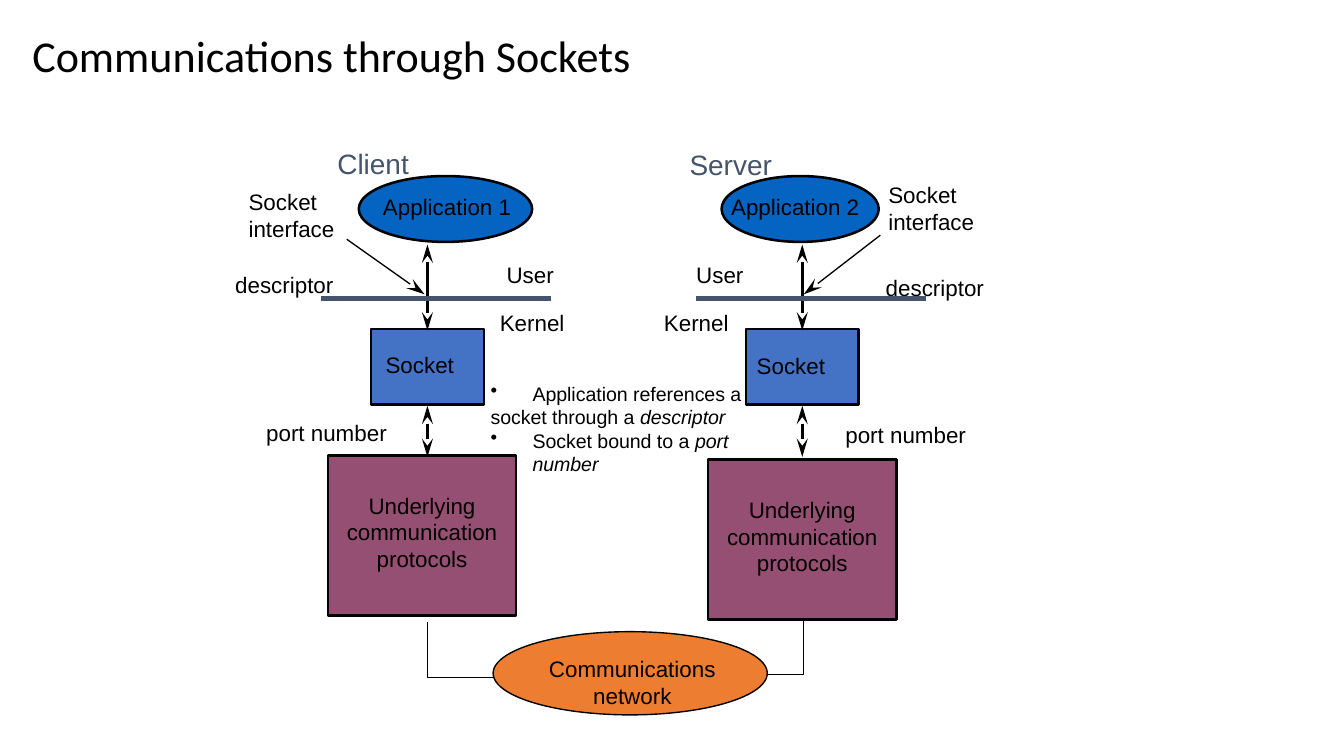
import pptx
import pptx.dml.color
import pptx.enum.shapes
import pptx.enum.text
import pptx.oxml.ns
import pptx.util
from lxml import etree

Pt = pptx.util.Pt
RGBColor = pptx.dml.color.RGBColor
Shape = pptx.enum.shapes.MSO_SHAPE
Align = pptx.enum.text.PP_ALIGN
Anchor = pptx.enum.text.MSO_ANCHOR
qn = pptx.oxml.ns.qn

BLACK = RGBColor(0x00, 0x00, 0x00)
SLATE = RGBColor(0x44, 0x54, 0x6A)
BLUE = RGBColor(0x05, 0x63, 0xC1)
SOCKET_BLUE = RGBColor(0x44, 0x72, 0xC4)
PLUM = RGBColor(0x95, 0x4F, 0x72)
ORANGE = RGBColor(0xED, 0x7D, 0x31)


class Diagram:
    """Style and page of a socket diagram, with lengths in points."""

    def __init__(self, page, font="Arial", size=12):
        self.page, self.font, self.size = page, font, size

    def shape(self, kind, left, top, width, height, fill, weight=1.35):
        box = self.page.shapes.add_shape(kind, Pt(left), Pt(top), Pt(width), Pt(height))
        box.shadow.inherit = False
        box.fill.solid()
        box.fill.fore_color.rgb = fill
        box.line.color.rgb = BLACK
        box.line.width = Pt(weight)

    def text(self, text, left, top, width, height=15, size=None, font=None,
             color=BLACK, align=Align.LEFT, anchor=Anchor.TOP):
        box = self.page.shapes.add_textbox(Pt(left), Pt(top), Pt(width), Pt(height))
        frame = box.text_frame
        frame.word_wrap = True
        frame.vertical_anchor = anchor
        frame.margin_left = frame.margin_right = frame.margin_top = frame.margin_bottom = 0
        para = frame.paragraphs[0]
        para.text = text
        para.alignment = align
        self.style(para, size, font, color)

    def style(self, para, size=None, font=None, color=BLACK):
        para.font.size = Pt(size or self.size)
        para.font.name = font or self.font
        para.font.color.rgb = color

    def notes(self, items, left, top, width, height, size, indent):
        box = self.page.shapes.add_textbox(Pt(left), Pt(top), Pt(width), Pt(height))
        frame = box.text_frame
        frame.word_wrap = True
        frame.margin_left = frame.margin_right = frame.margin_top = frame.margin_bottom = 0
        for index, (bulleted, plain, term) in enumerate(items):
            para = frame.add_paragraph() if index else frame.paragraphs[0]
            para.add_run().text = plain
            if term:
                span = para.add_run()
                span.text = term
                span.font.italic = True
            self.style(para, size)
            if bulleted:
                properties = para._p.get_or_add_pPr()
                properties.set("marL", str(Pt(indent)))
                properties.set("indent", str(-Pt(indent)))
                bullet = etree.Element(qn("a:buChar"), char="•")
                properties.insert_element_before(bullet, "a:tabLst", "a:defRPr")

    def line(self, start, end, color=BLACK, weight=0.7, heads=()):
        connector = self.page.shapes.add_connector(
            pptx.enum.shapes.MSO_CONNECTOR.STRAIGHT, *map(Pt, start + end))
        connector.line.color.rgb = color
        connector.line.width = Pt(weight)
        outline = connector.line._get_or_add_ln()
        for head in heads:
            etree.SubElement(outline, qn(f"a:{head}"), type="stealth", w="med", len="lg")
        etree.SubElement(connector._element.spPr, qn("a:effectLst"))

    def elbow(self, start, *points):
        builder = self.page.shapes.build_freeform(Pt(start[0]), Pt(start[1]), scale=1.0)
        builder.add_line_segments([(Pt(x), Pt(y)) for x, y in points], close=False)
        path = builder.convert_to_shape()
        path.shadow.inherit = False
        path.fill.background()
        path.line.color.rgb = BLACK
        path.line.width = Pt(0.7)


SIDES = [
    dict(axis=229, app=(192.2, 92.9), protocol=(175.7, 244), boundary=172.1,
         pointer=((185.8, 128.2), (227.5, 157.7)), role=("Client", 180.7, 78.5),
         labels=[("Application 1", 205.2, 103.7, 86), ("Socket", 206.6, 187.9, 50),
                 ("Socket interface", 133.2, 100.8, 54.7), ("descriptor", 126, 145.4, 60),
                 ("port number", 142.6, 224.6, 72), ("User", 271.4, 139.7, 34),
                 ("Kernel", 267.8, 165.6, 41)]),
    dict(axis=429.8, app=(386.6, 84.2), protocol=(379.4, 246.2), boundary=373,
         pointer=((471.6, 126), (430.6, 157.7)), role=("Server", 369.4, 79.2),
         labels=[("Application 2", 391.7, 103.7, 78.5), ("Socket", 405.4, 188.6, 50),
                 ("Socket interface", 475.9, 97.2, 53.3), ("descriptor", 474.5, 146.9, 60),
                 ("port number", 452.9, 225.4, 72), ("User", 373, 139.7, 36),
                 ("Kernel", 355.7, 165.6, 42.5)]),
]

NOTES = [
    (True, "Application references a", ""),
    (False, "socket through a ", "descriptor"),
    (True, "Socket bound to a ", "port number"),
]


def draw_side(diagram, axis, app, protocol, boundary, pointer, role, labels):
    name, left, top = role
    diagram.text(name, left, top, 60, 18, size=15, color=SLATE)
    diagram.shape(Shape.OVAL, app[0], 94.3, app[1], 35.3, BLUE)
    diagram.shape(Shape.RECTANGLE, axis - 30.2, 176.4, 60.5, 40.3, SOCKET_BLUE)
    diagram.shape(Shape.RECTANGLE, *protocol, 100.8, 85.7, PLUM)
    diagram.text("Underlying communication protocols", protocol[0] + 6, protocol[1] + 15.5,
                 88.8, 51, align=Align.CENTER, anchor=Anchor.MIDDLE)
    for top, bottom in ((131, 177.1), (217.4, 244.8)):
        diagram.line((axis, top), (axis, bottom), weight=1.35, heads=("headEnd", "tailEnd"))
    for label in labels:
        diagram.text(*label)
    diagram.line((boundary, 159.8), (boundary + 123.1, 159.8), SLATE, 2.7)
    diagram.line(*pointer, heads=("tailEnd",))


def main():
    deck = pptx.Presentation()
    deck.slide_width, deck.slide_height = Pt(720), Pt(405)
    diagram = Diagram(deck.slides.add_slide(deck.slide_layouts[6]))
    diagram.text("Communications through Sockets", 17.3, 11.5, 373, 35.3, size=23.6,
                 font="Calibri", anchor=Anchor.MIDDLE)
    diagram.elbow((430.6, 332.6), (430.6, 361.4), (383, 361.4))
    diagram.elbow((229, 333.4), (229, 362.9), (287.3, 362.9))
    diagram.shape(Shape.OVAL, 264.2, 338.4, 146.9, 44.6, ORANGE, 0.75)
    diagram.text("Communications network", 287.3, 347, 103, 36.7,
                 align=Align.CENTER, anchor=Anchor.MIDDLE)
    for side in SIDES:
        draw_side(diagram, **side)
    diagram.notes(NOTES, 262.8, 204.5, 157.7, 50, size=10.5, indent=22.5)
    deck.save("out.pptx")


if __name__ == "__main__":
    main()
